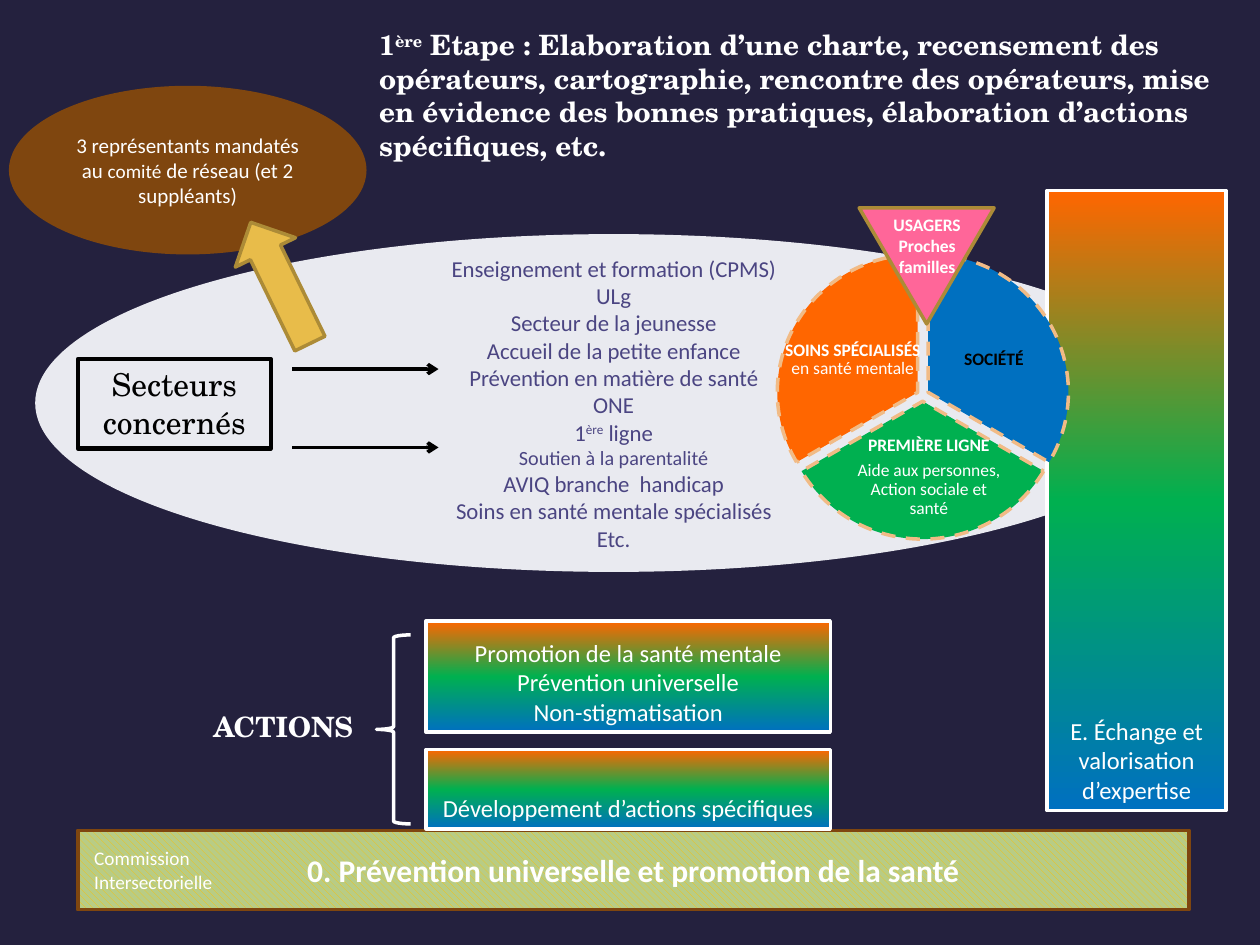
from copy import deepcopy
from lxml import etree
from pptx import Presentation
from pptx.dml.color import RGBColor
from pptx.enum import dml, shapes, text
from pptx.oxml.ns import qn
from pptx.util import Cm, Pt

SHAPE = shapes.MSO_SHAPE
ALIGN = text.PP_ALIGN
ANCHOR = text.MSO_ANCHOR
SANS, SERIF = "Calibri", "TeX Gyre Schola"
WHITE, BLACK = "FFFFFF", "000000"
BLUE, GREEN, ORANGE = "0070C0", "00B050", "FF6600"
BROWN, GOLD = "7F460F", "AC8B37"


def rgb(code):
    return RGBColor.from_string(code)


def write(shape, paras, size, color=WHITE, font=SANS, bold=False,
          align=ALIGN.CENTER, anchor=ANCHOR.MIDDLE, inset=None, tight=False):
    """Each paragraph is a string or a list of (text, run changes)."""
    frame = shape.text_frame
    frame.word_wrap = True
    frame.auto_size = text.MSO_AUTO_SIZE.NONE
    frame.vertical_anchor = anchor
    if inset is not None:
        frame.margin_left = frame.margin_right = Cm(inset)
        frame.margin_top = frame.margin_bottom = Cm(inset)
    for i, runs in enumerate(paras):
        para = frame.add_paragraph() if i else frame.paragraphs[0]
        para.alignment = align
        if tight:
            para.line_spacing, para.space_after = 0.9, Pt(size * 0.35)
        para.font.size, para.font.bold = Pt(size), bold
        para.font.name, para.font.color.rgb = font, rgb(color)
        for words, change in [(runs, {})] if isinstance(runs, str) else runs:
            run = para.add_run()
            run.text = words
            if "size" in change:
                run.font.size = Pt(change["size"])
            if "bold" in change:
                run.font.bold = change["bold"]
            if "base" in change:
                run.font._element.set("baseline", str(change["base"] * 1000))


def label(slide, x, y, w, h, paras, size, **style):
    box = slide.shapes.add_textbox(Cm(x), Cm(y), Cm(w), Cm(h))
    write(box, paras, size, **style)


def draw(slide, kind, x, y, w, h, fill=None, line=None, width=2):
    shape = slide.shapes.add_shape(kind, Cm(x), Cm(y), Cm(w), Cm(h))
    shape.shadow.inherit = False
    if fill:
        shape.fill.solid()
        shape.fill.fore_color.rgb = rgb(fill)
    else:
        shape.fill.background()
    if line:
        shape.line.color.rgb = rgb(line)
        shape.line.width = Pt(width)
    else:
        shape.line.fill.background()
    return shape


def blend(slide, x, y, w, h, paras):
    """White-edged box, blue at the foot to orange at the top."""
    shape = draw(slide, SHAPE.RECTANGLE, x, y, w, h, line=WHITE)
    shape.fill.gradient()
    shape.fill.gradient_angle = 90
    stops = shape._element.spPr.find(".//" + qn("a:gsLst"))
    stops.append(deepcopy(stops[-1]))
    for i, (stop, color) in enumerate(
            zip(shape.fill.gradient_stops, (BLUE, GREEN, ORANGE))):
        stop.position, stop.color.rgb = i / 2, rgb(color)
    write(shape, paras, 14, anchor=ANCHOR.BOTTOM)


def arrow(slide, x, y, w):
    line = slide.shapes.add_connector(
        shapes.MSO_CONNECTOR.STRAIGHT, Cm(x), Cm(y), Cm(x + w), Cm(y))
    line.line.color.rgb, line.line.width = rgb(BLACK), Pt(2)
    etree.SubElement(line.line._get_or_add_ln(), qn("a:tailEnd"), type="arrow")
    etree.SubElement(line._element.spPr, qn("a:effectLst"))


def title(slide, x, y, w, h):
    head = slide.shapes.title
    head.left, head.top, head.width, head.height = Cm(x), Cm(y), Cm(w), Cm(h)
    write(head, [[("1", {}), ("ère", {"base": 30}),
                  (" Etape : Elaboration d’une charte, recensement des "
                   "opérateurs, cartographie, rencontre des opérateurs, mise "
                   "en évidence des bonnes pratiques, élaboration d’actions "
                   "spécifiques, etc.", {})]],
          16, font=SERIF, bold=True, align=ALIGN.LEFT, anchor=ANCHOR.TOP)


def band(slide, x, y, w, h):
    bar = draw(slide, SHAPE.RECTANGLE, x, y, w, h, line=BROWN)
    bar.fill.patterned()
    bar.fill.pattern = dml.MSO_PATTERN.WIDE_DOWNWARD_DIAGONAL
    bar.fill.fore_color.rgb = rgb("FFC000")
    bar.fill.back_color.rgb = rgb("B8CC85")
    write(bar, ["0. Prévention universelle et promotion de la santé"],
          18, bold=True)
    label(slide, x + 0.33, y + 0.33, 2.62, 0.94,
          ["Commission Intersectorielle"], 11, align=ALIGN.LEFT,
          anchor=ANCHOR.TOP, inset=0)


def actions(slide, x, y):
    blend(slide, x + 5.39, y + 2.59, 8.15, 1.6,
          ["Développement d’actions spécifiques"])
    blend(slide, x + 5.39, y, 8.15, 2.24,
          ["Promotion de la santé mentale", "Prévention universelle",
           "Non-stigmatisation"])
    draw(slide, SHAPE.LEFT_BRACE, x + 4.39, y + 0.28, 0.69, 3.81, line=WHITE)
    label(slide, x, y + 1.65, 4.17, 0.94, ["ACTIONS"], 16, font=SERIF,
          bold=True, align=ALIGN.RIGHT, anchor=ANCHOR.TOP)


def sectors(slide, x, y, w, h):
    oval = draw(slide, SHAPE.OVAL, x, y, w, h, "E9EAF0")
    write(oval, ["Enseignement et formation (CPMS)", "ULg",
                 "Secteur de la jeunesse", "Accueil de la petite enfance",
                 "Prévention en matière de santé", "ONE",
                 [("1", {}), ("ère", {"base": 30}), (" ligne", {})],
                 [("Soutien à la parentalité", {"size": 11.5})],
                 "AVIQ branche  handicap",
                 "Soins en santé mentale spécialisés", "Etc."],
          13, color="4B4582")
    # Heading box with its two arrows
    head = draw(slide, SHAPE.RECTANGLE, x + 0.86, y + 2.52, 3.89, 1.8,
                line=BLACK, width=2.5)
    write(head, ["Secteurs concernés"], 18, color=BLACK, font=SERIF,
          anchor=ANCHOR.TOP)
    for drop in (2.72, 4.3):
        arrow(slide, x + 5.18, y + drop, 2.95)


def network(slide, x, y, w, h):
    oval = draw(slide, SHAPE.OVAL, x, y, w, h, BROWN)
    write(oval, [[("3 représentants mandatés au ", {}),
                  ("comité", {"size": 11}),
                  (" de réseau (et 2 suppléants)", {})]], 12)
    link = draw(slide, SHAPE.LEFT_ARROW, x + 4.11, y + 3.3, 2.72, 1.35,
                "E8BC4A", GOLD)
    link.rotation = 64


def wheel(slide, x, y):
    # Slices: offset, start and end angle, then label box and style
    slices = [
        (0.21, 0.94, 270, 30, BLUE, (3.35, 2.24, 2.03, 1.65), BLACK,
         ["SOCIÉTÉ"]),
        (0.1, 1.12, 30, 150, GREEN, (1.53, 4.7, 3.05, 1.45), WHITE,
         ["PREMIÈRE LIGNE",
          [("Aide aux personnes, Action sociale et santé",
            {"bold": False})]]),
        (0, 0.94, 150, 270, ORANGE, (0.1, 2.24, 2.84, 1.65), WHITE,
         [[("SOINS SPÉCIALISÉS ", {}),
           ("en santé mentale", {"bold": False})]]),
    ]
    for dx, dy, start, end, fill, (tx, ty, tw, th), color, paras in slices:
        pie = draw(slide, SHAPE.PIE, x + dx, y + dy, 5.66, 5.56, fill, "F1BB86")
        # Angles are stored in 60000ths of a degree, scaled by 100000
        pie.adjustments[0], pie.adjustments[1] = start * 0.6, end * 0.6
        pie.line.dash_style = dml.MSO_LINE.DASH
        label(slide, x + tx, y + ty, tw, th, paras, 10, color=color,
              bold=True, inset=0.05, tight=True)
    # Users' wedge
    wedge = draw(slide, SHAPE.ISOSCELES_TRIANGLE, x + 1.65, y, 2.72, 2.34,
                 "FF6699", GOLD)
    wedge.rotation = 180
    label(slide, x + 1.6, y, 2.84, 1.55, ["USAGERS", "Proches", "familles"],
          10, bold=True, anchor=ANCHOR.TOP)


def main():
    deck = Presentation()
    deck.slide_width, deck.slide_height = Cm(25.4), Cm(19.05)
    slide = deck.slides.add_slide(deck.slide_layouts[5])
    slide.background.fill.solid()
    slide.background.fill.fore_color.rgb = rgb("24213E")
    title(slide, 7.39, 0.43, 17.32, 3)
    band(slide, 1.57, 16.74, 22.4, 1.6)
    actions(slide, 3.2, 12.52)
    sectors(slide, 0.71, 4.72, 23.32, 6.81)
    blend(slide, 21.11, 3.84, 3.61, 12.5,
          ["E. Échange et valorisation d’expertise"])
    network(slide, 0.18, 1.73, 7.21, 3.4)
    wheel(slide, 15.67, 4.19)
    deck.save("out.pptx")


if __name__ == "__main__":
    main()
